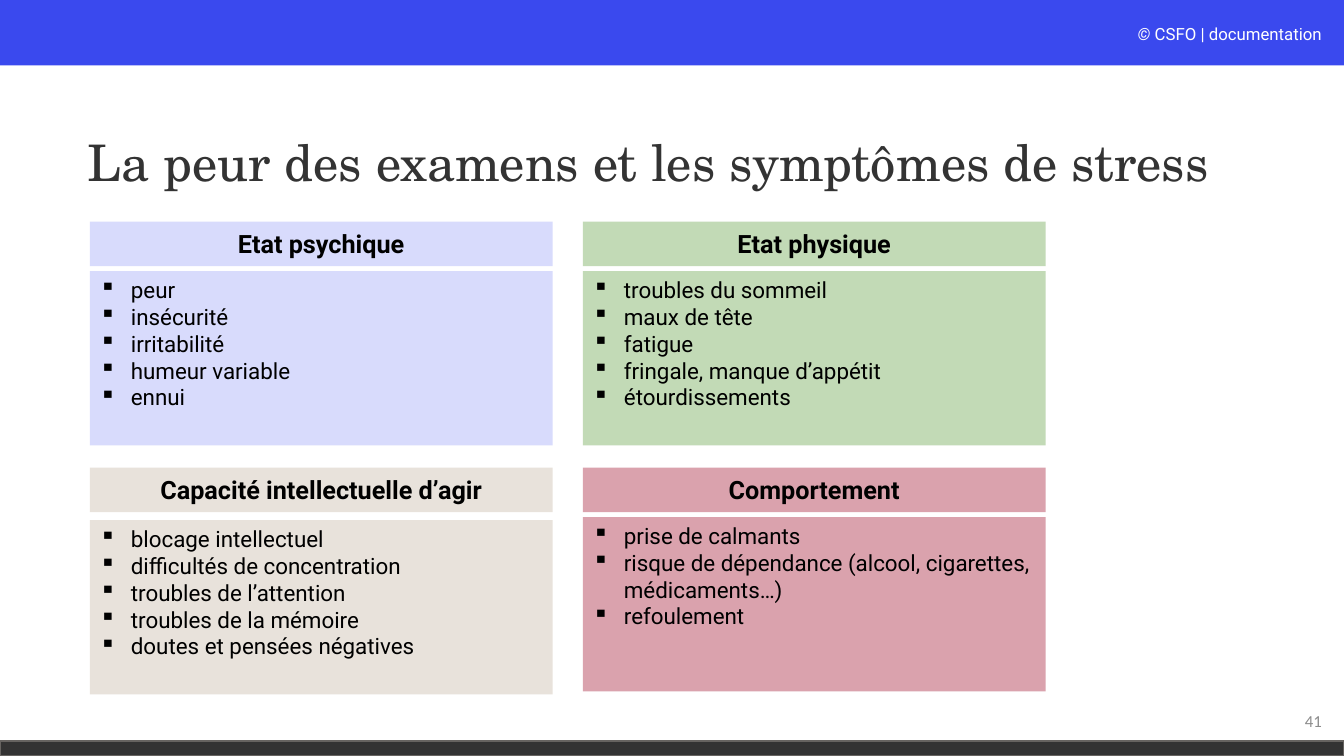
from dataclasses import dataclass

from lxml import etree
from pptx import Presentation
from pptx.dml.color import RGBColor
from pptx.enum import shapes, text
from pptx.oxml import ns
from pptx.util import Emu, Pt

PX = 9144  # EMU in one px, 100 px to the inch
SLIDE_W, SLIDE_H = 1333, 750
CARD_W, HEAD_H, BODY_H = 459, 44, 173
LEFT, TOP = 89, 220
COLUMN_STEP, ROW_STEP = 489, 244
BULLET_INDENT = 31


@dataclass(frozen=True)
class Theme:
    sans: str = "Roboto"
    serif: str = "TeX Gyre Schola"
    number_font: str = "Calibri"
    black: str = "000000"
    white: str = "FFFFFF"
    banner: str = "3A49EE"
    dark: str = "333333"
    footer_line: str = "666360"
    grey: str = "8C8C8C"
    title_size: int = 36
    head_size: int = 18
    body_size: int = 16
    small_size: int = 12


THEME = Theme()

# heading, colour, distance from the top of the heading to the list, symptoms
CARDS = [
    ("Etat psychique", "D8DBFC", 49,
     ["peur", "insécurité", "irritabilité", "humeur variable", "ennui"]),
    ("Etat physique", "C2DAB6", 49,
     ["troubles du sommeil", "maux de tête", "fatigue",
      "fringale, manque d’appétit", "étourdissements"]),
    ("Capacité intellectuelle d’agir", "E8E2DB", 52,
     ["blocage intellectuel", "difficultés de concentration",
      "troubles de l’attention", "troubles de la mémoire",
      "doutes et pensées négatives"]),
    ("Comportement", "DAA2AD", 49,
     ["prise de calmants",
      "risque de dépendance (alcool, cigarettes, médicaments…)",
      "refoulement"]),
]


def px(*lengths):
    return [Emu(length * PX) for length in lengths]


def add_box(slide, box, fill, line=None):
    shape = slide.shapes.add_shape(shapes.MSO_SHAPE.RECTANGLE, *px(*box))
    shape.shadow.inherit = False
    shape.fill.solid()
    shape.fill.fore_color.rgb = RGBColor.from_string(fill)
    if line:
        shape.line.color.rgb = RGBColor.from_string(line)
        shape.line.width = Pt(1)
    else:
        shape.line.fill.background()
    return shape


def style(paragraph, size, color, font=THEME.sans, bold=False, align=text.PP_ALIGN.LEFT):
    paragraph.alignment = align
    paragraph.font.size = Pt(size)
    paragraph.font.name = font
    paragraph.font.bold = bold
    paragraph.font.color.rgb = RGBColor.from_string(color)


def add_label(slide, box, words, anchor=text.MSO_ANCHOR.MIDDLE, **look):
    """Add a one-line text box and return its paragraph."""
    frame = slide.shapes.add_textbox(*px(*box)).text_frame
    frame.word_wrap = True
    frame.vertical_anchor = anchor
    paragraph = frame.paragraphs[0]
    paragraph.add_run().text = words
    style(paragraph, **look)
    return paragraph


def add_bullet(paragraph):
    properties = paragraph._p.get_or_add_pPr()
    properties.set("marL", str(BULLET_INDENT * PX))
    properties.set("indent", str(-BULLET_INDENT * PX))
    etree.SubElement(properties, ns.qn("a:buChar")).set("char", "▪")


def add_card(slide, left, top, heading, fill, list_offset, symptoms):
    head = add_box(slide, (left, top, CARD_W, HEAD_H), fill)
    head.text_frame.text = heading
    style(head.text_frame.paragraphs[0], THEME.head_size, THEME.black,
          bold=True, align=text.PP_ALIGN.CENTER)

    frame = add_box(slide, (left, top + list_offset, CARD_W, BODY_H), fill).text_frame
    frame.vertical_anchor = text.MSO_ANCHOR.TOP
    frame.text = "\n".join(symptoms)
    for paragraph in frame.paragraphs:
        add_bullet(paragraph)
        style(paragraph, THEME.body_size, THEME.black)


def add_frame(slide):
    """Add the banner, the footer bar, the copyright line and the page number."""
    add_box(slide, (0, 0, SLIDE_W, 65), THEME.banner)
    add_box(slide, (0, 735, SLIDE_W, 15), THEME.dark, THEME.footer_line)
    credit = add_label(slide, (862, 19, 459, 30), "© ", anchor=text.MSO_ANCHOR.TOP,
                       size=THEME.small_size, color=THEME.white,
                       align=text.PP_ALIGN.RIGHT)
    credit.runs[0].font.italic = True
    credit.add_run().text = "CSFO | documentation"
    add_label(slide, (1021, 695, 300, 40), "41", size=THEME.small_size,
              color=THEME.grey, font=THEME.number_font, align=text.PP_ALIGN.RIGHT)


def main():
    presentation = Presentation()
    presentation.slide_width, presentation.slide_height = px(SLIDE_W, SLIDE_H)
    slide = presentation.slides.add_slide(presentation.slide_layouts[6])

    add_frame(slide)
    title = add_label(slide, (77, 91, 1150, 145),
                      "La peur des examens et les symptômes de stress",
                      size=THEME.title_size, color=THEME.dark, font=THEME.serif)
    title.line_spacing = 0.9
    for index, card in enumerate(CARDS):
        row, column = divmod(index, 2)
        add_card(slide, LEFT + column * COLUMN_STEP, TOP + row * ROW_STEP, *card)

    presentation.save("out.pptx")


if __name__ == "__main__":
    main()
